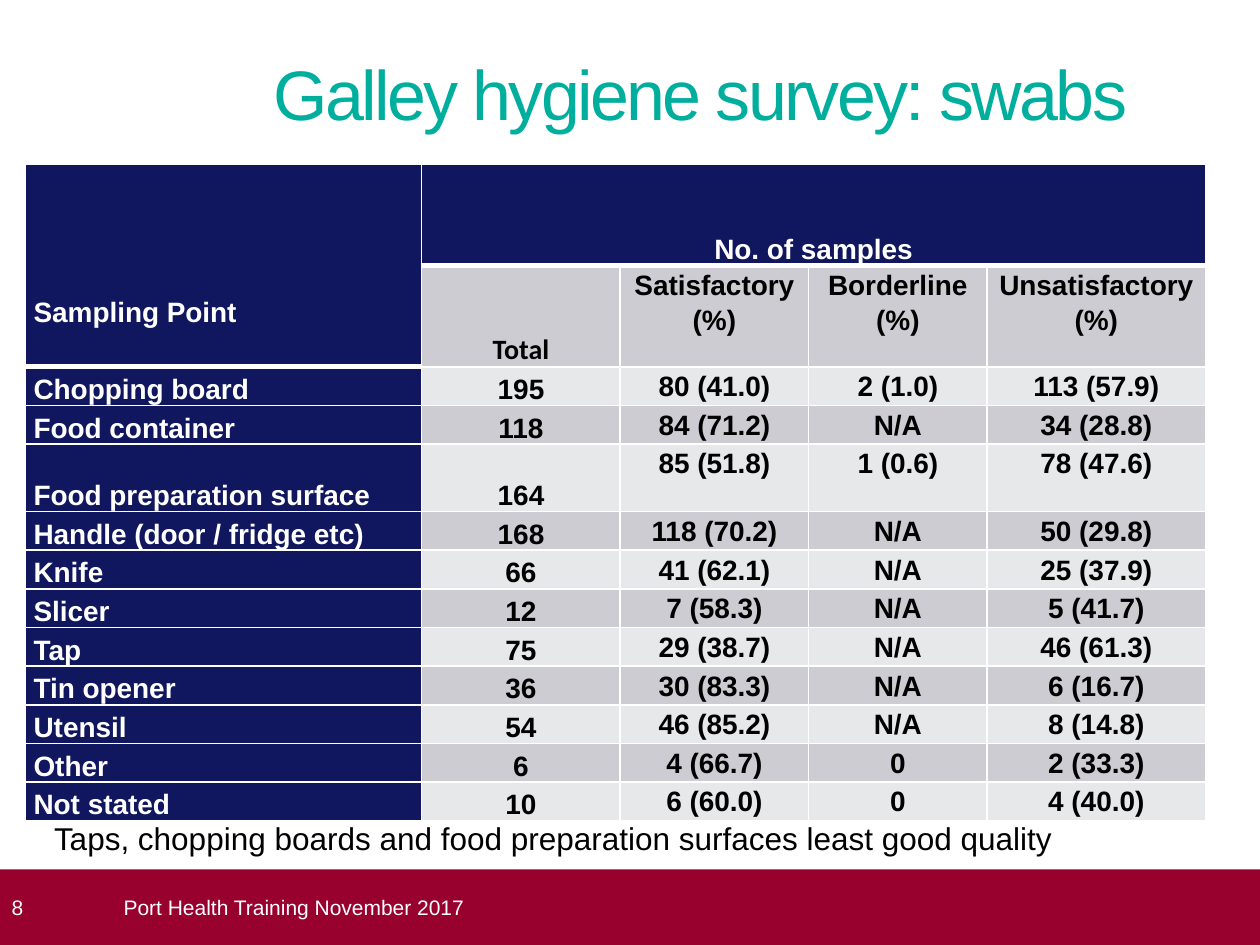
from pptx import Presentation
from pptx.util import Pt
from pptx.dml.color import RGBColor
from pptx.enum.shapes import MSO_SHAPE as Shape
from pptx.enum.text import MSO_ANCHOR as Anchor, PP_ALIGN as Align
from pptx.oxml.ns import qn
from lxml.etree import SubElement

TITLE = "Galley hygiene survey: swabs"
PAGE = "8"
FOOTER = "Port Health Training November 2017"
TAKEAWAY = "Taps, chopping boards and food preparation surfaces least good quality"
SURVEY = [
    ("Sampling Point", "No. of samples", "", "", ""),
    ("", "Total", "Satisfactory\n(%)", "Borderline\n(%)", "Unsatisfactory\n(%)"),
    ("Chopping board", "195", "80 (41.0)", "2 (1.0)", "113 (57.9)"),
    ("Food container", "118", "84 (71.2)", "N/A", "34 (28.8)"),
    ("Food preparation surface", "164", "85 (51.8)", "1 (0.6)", "78 (47.6)"),
    ("Handle (door / fridge etc)", "168", "118 (70.2)", "N/A", "50 (29.8)"),
    ("Knife", "66", "41 (62.1)", "N/A", "25 (37.9)"),
    ("Slicer", "12", "7 (58.3)", "N/A", "5 (41.7)"),
    ("Tap", "75", "29 (38.7)", "N/A", "46 (61.3)"),
    ("Tin opener", "36", "30 (83.3)", "N/A", "6 (16.7)"),
    ("Utensil", "54", "46 (85.2)", "N/A", "8 (14.8)"),
    ("Other", "6", "4 (66.7)", "0", "2 (33.3)"),
    ("Not stated", "10", "6 (60.0)", "0", "4 (40.0)"),
]
THEME = {
    "font": "Arial", "total_font": "Calibri",
    "title": "00AE9E", "navy": "11175E", "band": ("CCCCD2", "E7E8EA"),
    "footer": "98002E", "white": "FFFFFF", "black": "000000",
    "title_size": 40, "caption_size": 18, "table_size": 16, "footer_size": 12,
}
COLUMN_WIDTHS = [226.8, 113.4, 107.7, 102, 124.8]
HEADER_HEIGHT, ROW_HEIGHT, TALL_HEIGHT = 58, 21.4, 38.6
TALL_ROW = 4
THIN, THICK = 1, 3


def color(key):
    return RGBColor.from_string(THEME.get(key, key))


def style(paragraph, size, ink, bold=False, font="font"):
    paragraph.font.name = THEME[font]
    paragraph.font.size = Pt(THEME[size])
    paragraph.font.bold = bold
    paragraph.font.color.rgb = color(ink)


def write(shape, text, size, ink, anchor, left=0, wrap=True):
    frame = shape.text_frame
    frame.word_wrap = wrap
    frame.margin_left = Pt(left)
    frame.margin_top = frame.margin_right = frame.margin_bottom = 0
    frame.vertical_anchor = anchor
    frame.text = text
    frame.paragraphs[0].alignment = Align.LEFT
    style(frame.paragraphs[0], size, ink)


def set_borders(cell, widths):
    properties = cell._tc.get_or_add_tcPr()
    for position, (side, width) in enumerate(widths.items()):
        line = SubElement(properties, qn(f"a:ln{side}"), w=str(Pt(width)))
        fill = SubElement(line, qn("a:solidFill"))
        SubElement(fill, qn("a:srgbClr"), val=THEME["white"])
        properties.insert(position, line)


def add_survey(slide):
    heights = [HEADER_HEIGHT] * 2 + [ROW_HEIGHT] * (len(SURVEY) - 2)
    heights[TALL_ROW] = TALL_HEIGHT
    table = slide.shapes.add_table(
        len(SURVEY), len(COLUMN_WIDTHS), Pt(14.2), Pt(93.6),
        Pt(sum(COLUMN_WIDTHS)), Pt(sum(heights))).table
    for column, width in zip(table.columns, COLUMN_WIDTHS):
        column.width = Pt(width)
    for row, height in zip(table.rows, heights):
        row.height = Pt(height)
    table.cell(0, 0).merge(table.cell(1, 0))
    table.cell(0, 1).merge(table.cell(0, 4))
    for r, record in enumerate(SURVEY):
        for c, text in enumerate(record):
            cell = table.cell(r, c)
            heading = r == 0 or c == 0
            cell.margin_left = cell.margin_right = Pt(5)
            cell.margin_top = cell.margin_bottom = 0
            cell.vertical_anchor = Anchor.BOTTOM if heading or c == 1 else Anchor.TOP
            cell.fill.solid()
            cell.fill.fore_color.rgb = color("navy" if heading else THEME["band"][(r + 1) % 2])
            cell.text_frame.text = text
            for paragraph in cell.text_frame.paragraphs:
                paragraph.alignment = Align.LEFT if c == 0 else Align.CENTER
                paragraph.line_spacing = 1.15
                style(paragraph, "table_size", "white" if heading else "black", True,
                      "total_font" if text == "Total" else "font")
            above = r == 1 or (r == 2 and c == 0)
            below = r == 0 or (r == 1 and c == 0)
            set_borders(cell, {"L": THIN, "R": THIN,
                               "T": THICK if above else THIN,
                               "B": THICK if below else THIN})
    table.cell(0, 0).margin_bottom = Pt(22)


def main():
    deck = Presentation()
    deck.slide_width, deck.slide_height = Pt(720), Pt(540)
    slide = deck.slides.add_slide(deck.slide_layouts[6])
    shapes = slide.shapes

    title = shapes.add_textbox(Pt(156.2), Pt(25.9), Pt(544.3), Pt(51.1))
    write(title, TITLE, "title_size", "title", Anchor.BOTTOM)
    title.text_frame.paragraphs[0].runs[0].font._element.set("spc", "-150")
    style(title.text_frame.paragraphs[0].runs[0], "title_size", "title")

    add_survey(slide)

    band = shapes.add_shape(Shape.RECTANGLE, 0, Pt(496.8), Pt(720), Pt(43.2))
    band.shadow.inherit = False
    band.fill.solid()
    band.fill.fore_color.rgb = color("footer")
    band.line.fill.background()
    write(band, PAGE, "footer_size", "white", Anchor.MIDDLE, left=6.7)

    footer = shapes.add_textbox(Pt(70.6), Pt(496.8), Pt(635), Pt(43.2))
    write(footer, FOOTER, "footer_size", "white", Anchor.MIDDLE)

    takeaway = shapes.add_textbox(Pt(23.8), Pt(464.4), Pt(590.4), Pt(28.8))
    write(takeaway, TAKEAWAY, "caption_size", "black", Anchor.MIDDLE, left=7.2, wrap=False)

    deck.save("out.pptx")


if __name__ == "__main__":
    main()
